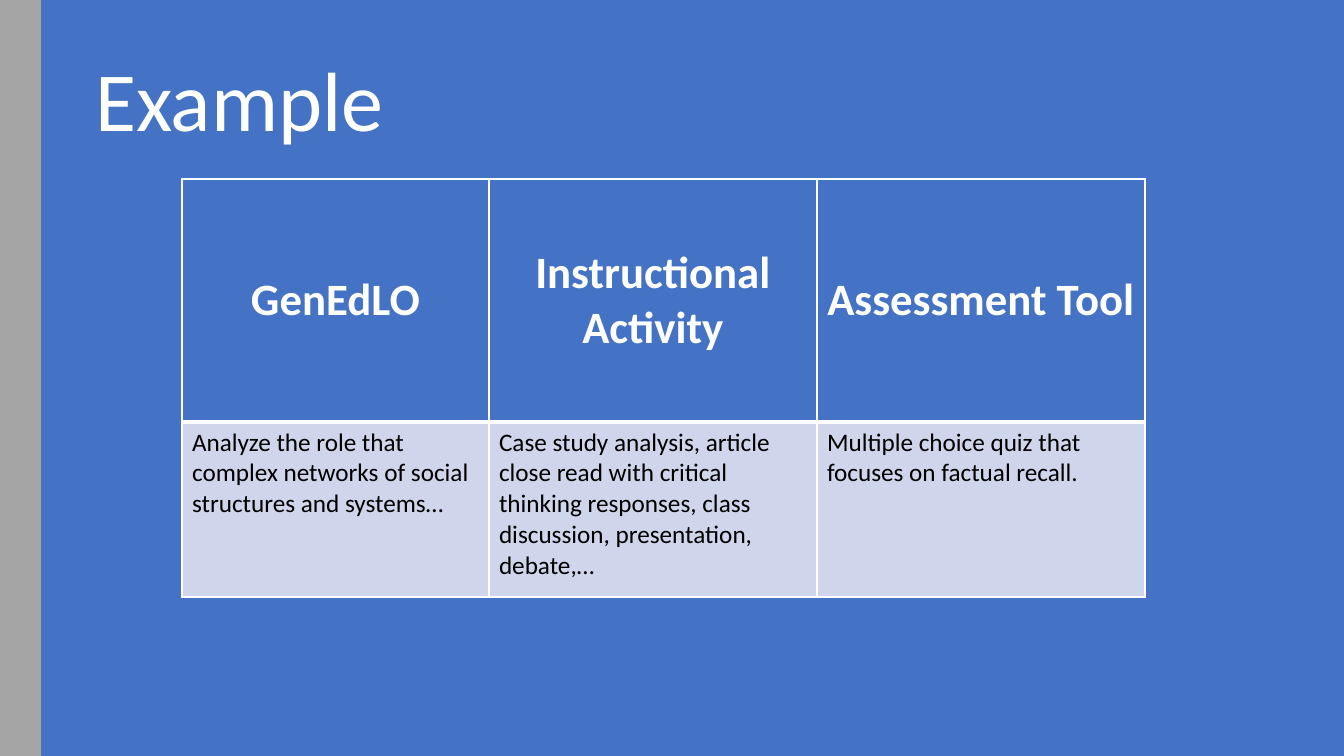
from lxml import etree
from pptx import Presentation, util as u
from pptx.dml.color import RGBColor
from pptx.enum import shapes, text
from pptx.oxml.ns import qn

EMU_PER_PX = 914400 / 100.8
COLORS = {"blue": "4472C4", "gray": "A5A5A5", "pale": "CFD5EA",
          "white": "FFFFFF", "black": "000000"}
FONT = "Calibri"


def px(length):
    return u.Emu(round(length * EMU_PER_PX))


def rgb(name):
    return RGBColor.from_string(COLORS[name])


presentation = Presentation()
presentation.slide_width, presentation.slide_height = px(1344), px(756)
slide = presentation.slides.add_slide(presentation.slide_layouts[5])
title = slide.shapes.title

# Backdrop and side band
for left, width, color in [(22, 1322, "blue"), (0, 41, "gray")]:
    panel = slide.shapes.add_shape(
        shapes.MSO_SHAPE.RECTANGLE, px(left), 0, px(width), px(756))
    panel.shadow.inherit = False
    panel.fill.solid()
    panel.fill.fore_color.rgb = rgb(color)
    panel.line.fill.background()

# Title, raised above the panels
slide.shapes._spTree.append(title._element)
title.left, title.top, title.width, title.height = px(85), px(38), px(549), px(117)
frame = title.text_frame
frame.text = "Example"
frame.auto_size = text.MSO_AUTO_SIZE.NONE
frame.vertical_anchor = text.MSO_ANCHOR.BOTTOM
paragraph = frame.paragraphs[0]
paragraph.alignment = text.PP_ALIGN.LEFT
paragraph.line_spacing = 0.9
paragraph.font.name = FONT
paragraph.font.size = u.Pt(60)
paragraph.font.color.rgb = rgb("white")

# Table
column_widths = [307, 328, 328]
row_heights = [243, 175]
rows = [
    ["GenEdLO", "Instructional Activity", "Assessment Tool"],
    ["Analyze the role that complex networks of social structures and systems…",
     "Case study analysis, article close read with critical thinking responses, "
     "class discussion, presentation, debate,…",
     "Multiple choice quiz that focuses on factual recall."],
]
table = slide.shapes.add_table(
    len(rows), len(column_widths), px(182), px(179),
    px(sum(column_widths)), px(sum(row_heights))).table
for column, width in zip(table.columns, column_widths):
    column.width = px(width)
for row, height in zip(table.rows, row_heights):
    row.height = px(height)

for row_index, row_texts in enumerate(rows):
    is_header = row_index == 0
    divider = "lnB" if is_header else "lnT"
    for column_index, cell_text in enumerate(row_texts):
        cell = table.cell(row_index, column_index)
        cell.text = cell_text
        properties = cell._tc.get_or_add_tcPr()
        for side in ("lnL", "lnR", "lnT", "lnB"):
            points = 3 if side == divider else 1
            border = etree.SubElement(properties, qn(f"a:{side}"), w=str(u.Pt(points)))
            fill = etree.SubElement(border, qn("a:solidFill"))
            etree.SubElement(fill, qn("a:srgbClr"), val=COLORS["white"])
        cell.fill.solid()
        cell.fill.fore_color.rgb = rgb("blue" if is_header else "pale")
        cell.vertical_anchor = text.MSO_ANCHOR.MIDDLE if is_header else text.MSO_ANCHOR.TOP
        paragraph = cell.text_frame.paragraphs[0]
        paragraph.alignment = text.PP_ALIGN.CENTER if is_header else text.PP_ALIGN.LEFT
        paragraph.font.name = FONT
        paragraph.font.size = u.Pt(32 if is_header else 18)
        paragraph.font.bold = is_header
        paragraph.font.color.rgb = rgb("white" if is_header else "black")

presentation.save("out.pptx")
